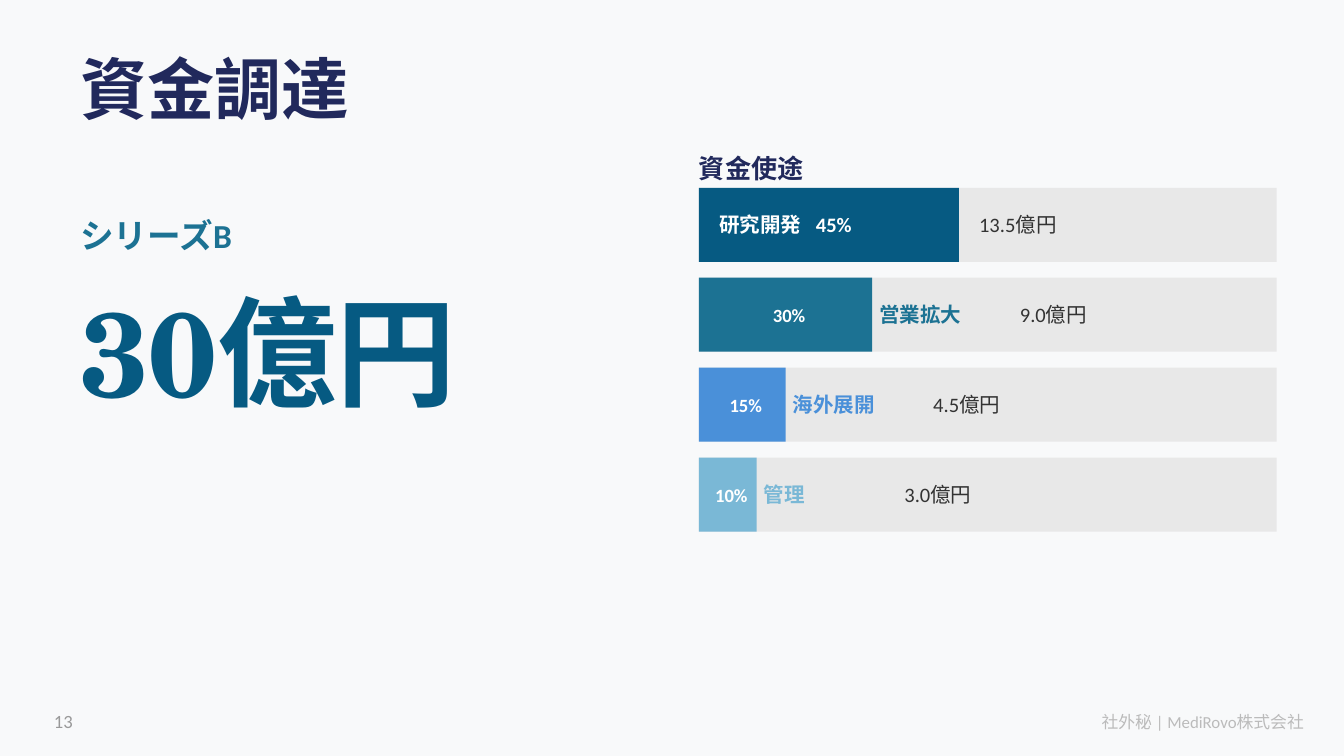
import pptx
import pptx.dml.color
import pptx.enum.shapes
import pptx.enum.text
import pptx.oxml
import pptx.oxml.ns
import pptx.util

Cm = pptx.util.Cm
RGBColor = pptx.dml.color.RGBColor
ALIGN = pptx.enum.text.PP_ALIGN
ANCHOR = pptx.enum.text.MSO_ANCHOR

BACKGROUND = RGBColor(0xF8, 0xF9, 0xFA)
NAVY = RGBColor(0x21, 0x29, 0x5C)
DEEP_BLUE = RGBColor(0x06, 0x5A, 0x82)
TEAL = RGBColor(0x1C, 0x72, 0x93)
BLUE = RGBColor(0x4A, 0x90, 0xD9)
LIGHT_BLUE = RGBColor(0x7A, 0xB8, 0xD6)
TRACK = RGBColor(0xE8, 0xE8, 0xE8)
WHITE = RGBColor(0xFF, 0xFF, 0xFF)
DARK = RGBColor(0x33, 0x33, 0x33)
GRAY = RGBColor(0x99, 0x99, 0x99)
PALE_GRAY = RGBColor(0xBB, 0xBB, 0xBB)

SERIF = "TeX Gyre Schola"
SANS = "Calibri"
TOTAL = 30
USES = [
    ("研究開発", 13.5, DEEP_BLUE),
    ("営業拡大", 9.0, TEAL),
    ("海外展開", 4.5, BLUE),
    ("管理", 3.0, LIGHT_BLUE),
]


def add_text(slide, box, text, size, color, bold=False, font=SANS,
             align=ALIGN.LEFT, anchor=ANCHOR.MIDDLE, tab=None):
    """Place one line of text in a box without margins."""
    frame = slide.shapes.add_textbox(*map(Cm, box)).text_frame
    frame.word_wrap = True
    frame.vertical_anchor = anchor
    frame.margin_left = frame.margin_right = 0
    frame.margin_top = frame.margin_bottom = 0
    paragraph = frame.paragraphs[0]
    paragraph.alignment = align
    if tab is not None:
        properties = paragraph._p.get_or_add_pPr()
        tabs = pptx.oxml.parse_xml(
            f'<a:tabLst {pptx.oxml.ns.nsdecls("a")}>'
            f'<a:tab pos="{int(Cm(tab))}" algn="l"/></a:tabLst>')
        properties.append(tabs)
    run = paragraph.add_run()
    run.text = text
    run.font.name = font
    run.font.size = pptx.util.Pt(size)
    run.font.bold = bold
    run.font.color.rgb = color


def add_bar(slide, box, color):
    """Draw a plain filled rectangle."""
    shape = slide.shapes.add_shape(
        pptx.enum.shapes.MSO_SHAPE.RECTANGLE, *map(Cm, box))
    shape.shadow.inherit = False
    shape.fill.solid()
    shape.fill.fore_color.rgb = color
    shape.line.fill.background()


def add_round(slide, left, top, width):
    """Show the funding round and its amount."""
    add_text(slide, (left, top, width, 1.27), "シリーズB", 18, TEAL, True)
    add_text(slide, (left, top + 1.27, width, 3.05), f"{TOTAL}億円", 64,
             DEEP_BLUE, True, SERIF)


def add_use_row(slide, left, top, width, height, use):
    """Draw one use of funds as a share of the full track."""
    name, amount, color = use
    share = amount / TOTAL
    bar = width * share
    end = left + bar
    add_bar(slide, (left, top, width, height), TRACK)
    add_bar(slide, (left, top, bar, height), color)
    if share > 0.4:
        add_text(slide, (left + 0.38, top, bar - 0.5, height),
                 f"{name}\t{share:.0%}", 11, WHITE, True, tab=1.83)
        amount_left = end + 0.38
    else:
        add_text(slide, (left + 0.13, top, bar - 0.13, height),
                 f"{share:.0%}", 10, WHITE, True, align=ALIGN.CENTER)
        add_text(slide, (end + 0.13, top, 2.54, height), name, 11, color, True)
        amount_left = end + 2.79
    add_text(slide, (amount_left, top, 3.05, height), f"{amount:.1f}億円",
             11, DARK)


def add_uses(slide, left, top, width):
    """Stack the uses of funds under their heading."""
    heading, height, pitch = 0.76, 1.4, 1.7
    add_text(slide, (left, top, width, heading), "資金使途", 14, NAVY, True)
    for index, use in enumerate(USES):
        add_use_row(slide, left, top + heading + index * pitch, width, height,
                    use)


def add_footer(slide, left, top, width, height):
    """Set the page number on the left and the notice on the right."""
    notice = 6.86
    add_text(slide, (left, top, 1.27, height), "13", 10, GRAY,
             anchor=ANCHOR.BOTTOM)
    add_text(slide, (left + width - notice, top, notice, height),
             "社外秘 | MediRovo株式会社", 9, PALE_GRAY, align=ALIGN.RIGHT,
             anchor=ANCHOR.BOTTOM)


def main():
    """Build the funding slide and save it."""
    presentation = pptx.Presentation()
    presentation.slide_width = Cm(25.4)
    presentation.slide_height = Cm(14.29)
    slide = presentation.slides.add_slide(presentation.slide_layouts[6])
    slide.background.fill.solid()
    slide.background.fill.fore_color.rgb = BACKGROUND
    add_text(slide, (1.52, 0.76, 22.86, 1.78), "資金調達", 36, NAVY, True, SERIF)
    add_round(slide, 1.52, 3.81, 10.16)
    add_uses(slide, 13.21, 2.79, 10.92)
    add_footer(slide, 1.02, 13.08, 23.62, 0.76)
    presentation.save("out.pptx")


if __name__ == "__main__":
    main()
